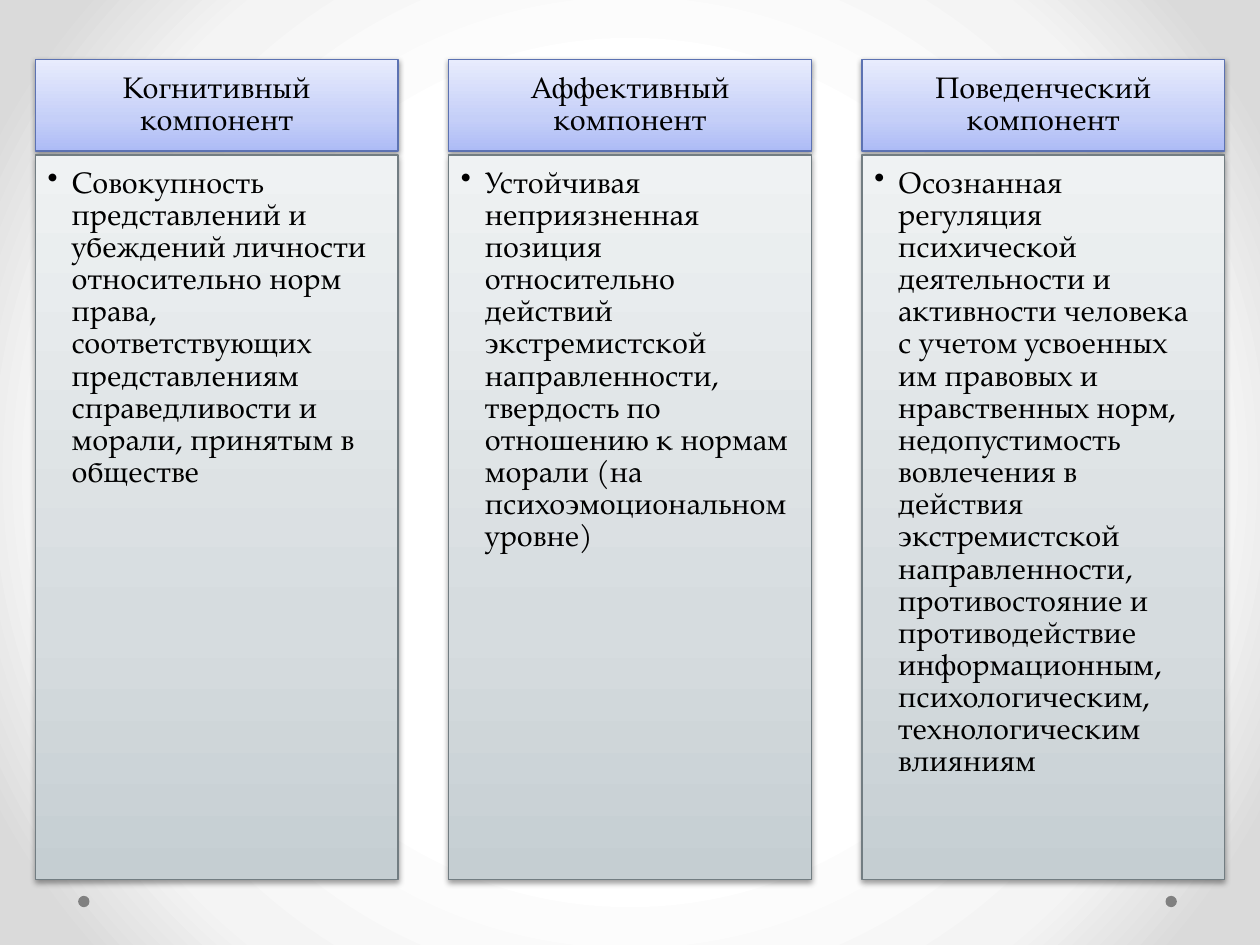
from pptx import Presentation
from pptx.dml.color import RGBColor
from pptx.enum.shapes import MSO_SHAPE
from pptx.enum.text import MSO_ANCHOR, PP_ALIGN
from pptx.oxml import parse_xml
from pptx.oxml.ns import nsdecls, qn
from pptx.util import Inches, Pt

RECTANGLE, OVAL = MSO_SHAPE.RECTANGLE, MSO_SHAPE.OVAL
TOP, MIDDLE = MSO_ANCHOR.TOP, MSO_ANCHOR.MIDDLE
LEFT, CENTER = PP_ALIGN.LEFT, PP_ALIGN.CENTER

BLACK = RGBColor(0x00, 0x00, 0x00)
DOT_GRAY = RGBColor(0x80, 0x80, 0x80)
HEADING_LINE = RGBColor(0x5C, 0x72, 0xB2)
BODY_LINE = RGBColor(0x72, 0x7D, 0x82)

# Gradient stops: position in percent, colour
HEADING_STOPS = [(0, RGBColor(0xAD, 0xBB, 0xF6)), (35, RGBColor(0xC5, 0xCF, 0xF8)),
                 (100, RGBColor(0xE8, 0xEC, 0xFD))]
BODY_STOPS = [(0, RGBColor(0xC5, 0xCE, 0xD2)), (35, RGBColor(0xD6, 0xDC, 0xDF)),
              (100, RGBColor(0xEF, 0xF2, 0xF3))]
PAGE_STOPS = [(50, RGBColor(0xFF, 0xFF, 0xFF)), (76, RGBColor(0xF4, 0xF4, 0xF4)),
              (92, RGBColor(0xDA, 0xDA, 0xDA))]
UPWARD = '<a:lin ang="16200000" scaled="0"/>'
RADIAL = ('<a:path path="circle"><a:fillToRect l="50000" t="50000" '
          'r="50000" b="50000"/></a:path>')

FONT, FONT_SIZE = "TeX Gyre Pagella", Pt(17)

# Column grid, in inches
MARGIN, COLUMN_WIDTH, COLUMN_STEP = 0.28, 2.88, 3.28
HEADING_TOP, HEADING_HEIGHT = 0.47, 0.73
BODY_TOP, BODY_HEIGHT = 1.23, 5.75
BULLET_INDENT = Inches(0.19)

COMPONENTS = [
    ("Когнитивный компонент",
     "Совокупность представлений и убеждений личности относительно норм права, "
     "соответствующих представлениям справедливости и морали, принятым в обществе"),
    ("Аффективный компонент",
     "Устойчивая неприязненная позиция относительно действий экстремистской "
     "направленности, твердость по отношению к нормам морали "
     "(на психоэмоциональном уровне)"),
    ("Поведенческий компонент",
     "Осознанная регуляция психической деятельности и активности человека с учетом "
     "усвоенных им правовых и нравственных норм, недопустимость вовлечения в действия "
     "экстремистской направленности, противостояние и противодействие информационным, "
     "психологическим, технологическим влияниям"),
]


def set_gradient(fill, properties, stops, direction):
    """Give a fill the listed stops; properties is the element that holds it."""
    fill.gradient()
    stop_xml = "".join(
        f'<a:gs pos="{position * 1000}"><a:srgbClr val="{color}"/></a:gs>'
        for position, color in stops)
    gradient = parse_xml(f'<a:gradFill {nsdecls("a")} rotWithShape="1">'
                         f'<a:gsLst>{stop_xml}</a:gsLst>{direction}</a:gradFill>')
    properties.replace(properties.find(qn("a:gradFill")), gradient)


def add_shadow(shape):
    shape.shadow.inherit = False
    effects = shape._element.spPr.find(qn("a:effectLst"))
    effects.append(parse_xml(
        f'<a:outerShdw {nsdecls("a")} blurRad="40000" dist="20000" dir="5400000" '
        'rotWithShape="0"><a:srgbClr val="000000"><a:alpha val="38000"/>'
        '</a:srgbClr></a:outerShdw>'))


def add_panel(page, left, top, height, stops, line_color):
    panel = page.shapes.add_shape(RECTANGLE, Inches(left), Inches(top),
                                  Inches(COLUMN_WIDTH), Inches(height))
    set_gradient(panel.fill, panel._element.spPr, stops, UPWARD)
    panel.line.color.rgb = line_color
    panel.line.width = Pt(0.75)
    add_shadow(panel)
    return panel


def write_text(panel, text, insets, anchor, alignment, space_after):
    frame = panel.text_frame
    frame.word_wrap = True
    frame.vertical_anchor = anchor
    (frame.margin_left, frame.margin_top,
     frame.margin_right, frame.margin_bottom) = map(Inches, insets)
    frame.text = text
    para = frame.paragraphs[0]
    para.alignment = alignment
    para.line_spacing = 0.9
    para.space_after = space_after
    font = para.runs[0].font
    font.name, font.size = FONT, FONT_SIZE
    font.color.rgb = BLACK
    return para


def add_bullet(para):
    para.level = 1
    properties = para._p.get_or_add_pPr()
    properties.set("marL", str(BULLET_INDENT))
    properties.set("indent", str(-BULLET_INDENT))
    properties.append(parse_xml(f'<a:buChar {nsdecls("a")} char="•"/>'))


def add_column(page, index, heading, description):
    left = MARGIN + index * COLUMN_STEP
    head = add_panel(page, left, HEADING_TOP, HEADING_HEIGHT, HEADING_STOPS, HEADING_LINE)
    write_text(head, heading, (0.13, 0.08, 0.13, 0.08), MIDDLE, CENTER, Pt(6))
    body = add_panel(page, left, BODY_TOP, BODY_HEIGHT, BODY_STOPS, BODY_LINE)
    add_bullet(write_text(body, description, (0.1, 0.1, 0.13, 0.15), TOP, LEFT, Pt(2.5)))


def add_dot(page, left):
    dot = page.shapes.add_shape(OVAL, Inches(left), Inches(7.11),
                                Inches(0.09), Inches(0.09))
    dot.fill.solid()
    dot.fill.fore_color.rgb = DOT_GRAY
    dot.line.fill.background()
    dot.shadow.inherit = False


def main():
    deck = Presentation()
    deck.slide_width, deck.slide_height = Inches(10), Inches(7.5)
    page = deck.slides.add_slide(deck.slide_layouts[6])

    # Background with a bright centre
    background = page.background.fill
    background.solid()
    set_gradient(background, next(page._element.iter(qn("p:bgPr"))), PAGE_STOPS, RADIAL)

    # Footer dots
    for left in (9.25, 0.62):
        add_dot(page, left)

    # One column per component
    for index, (heading, description) in enumerate(COMPONENTS):
        add_column(page, index, heading, description)

    deck.save("out.pptx")


if __name__ == "__main__":
    main()
